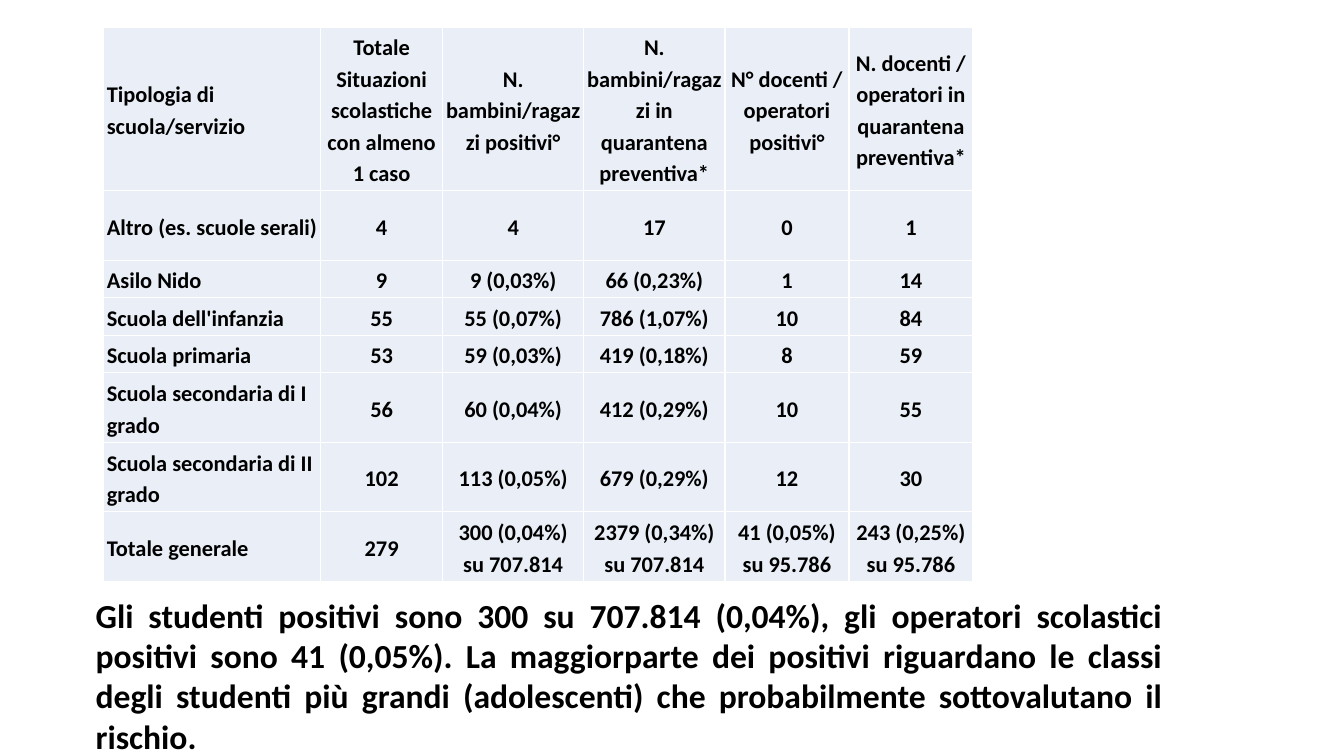
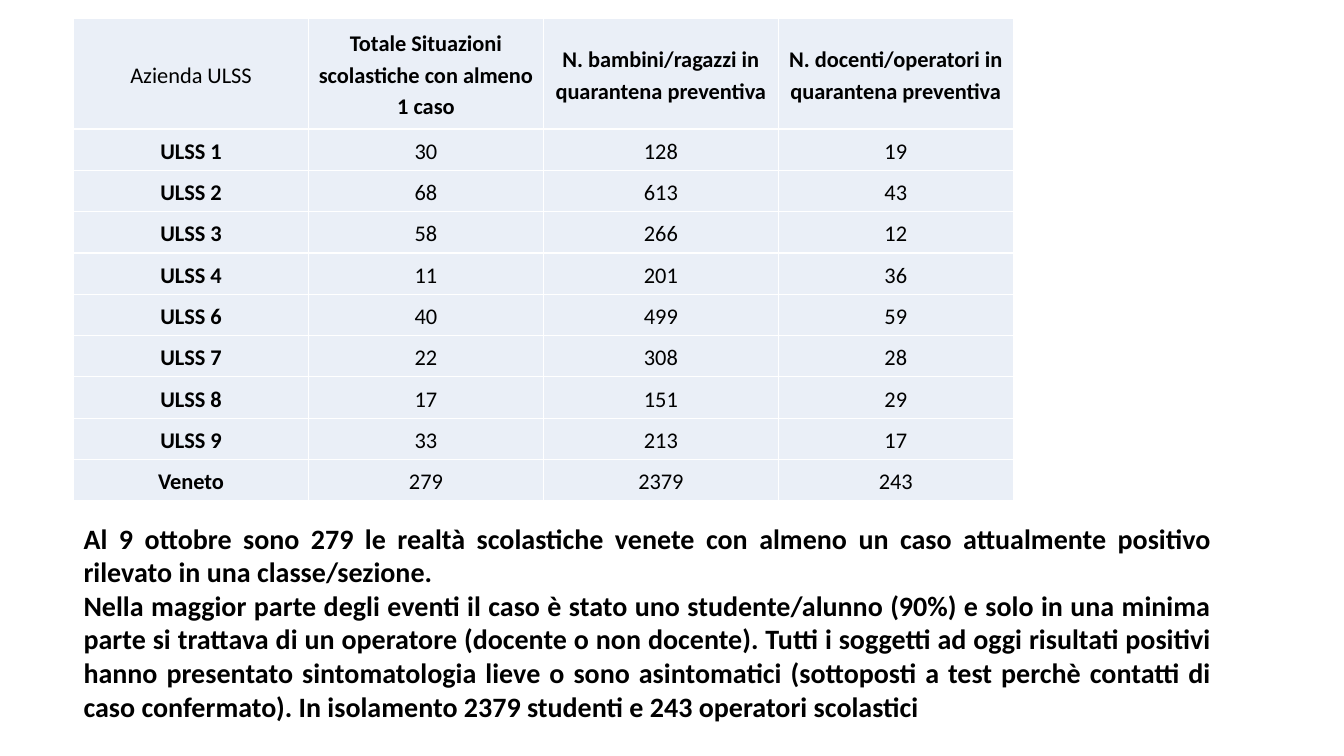
"""Build two slides on positive cases and quarantines in Veneto schools."""
import pptx
import pptx.dml.color
import pptx.enum.text
import pptx.oxml
import pptx.oxml.ns
import pptx.util

Inches, Pt = pptx.util.Inches, pptx.util.Pt
ALIGN = pptx.enum.text.PP_ALIGN
FONT = "Calibri"
COLORS = {"text": "000000", "cell": "EAEFF7", "border": "FFFFFF"}

SLIDES = [
    {
        "table_at": (1.03, 0.27),
        "cols": [2.15, 1.21, 1.4, 1.4, 1.23, 1.23],
        "heights": [1.56, 0.69] + [0.37] * 3 + [0.69] * 3,
        "label_align": ALIGN.LEFT,
        "all_bold": True,
        "rows": [
            ("Tipologia di scuola/servizio",
             "Totale Situazioni scolastiche con almeno 1 caso",
             "N. bambini/ragazzi positivi°",
             "N. bambini/ragazzi in quarantena preventiva*",
             "N° docenti / operatori positivi°",
             "N. docenti / operatori in quarantena preventiva*"),
            ("Altro (es. scuole serali)", "4", "4", "17", "0", "1"),
            ("Asilo Nido", "9", "9 (0,03%)", "66 (0,23%)", "1", "14"),
            ("Scuola dell'infanzia", "55", "55 (0,07%)", "786 (1,07%)", "10", "84"),
            ("Scuola primaria", "53", "59 (0,03%)", "419 (0,18%)", "8", "59"),
            ("Scuola secondaria di I grado", "56", "60 (0,04%)", "412 (0,29%)", "10", "55"),
            ("Scuola secondaria di II grado", "102", "113 (0,05%)", "679 (0,29%)", "12", "30"),
            ("Totale generale", "279", "300 (0,04%)\nsu 707.814",
             "2379 (0,34%)\nsu 707.814", "41 (0,05%) su 95.786",
             "243 (0,25%)\nsu 95.786"),
        ],
        "note_at": (0.85, 5.85, 10.78, 1.72),
        "note_size": 24,
        "note": "Gli studenti positivi sono 300 su 707.814 (0,04%), gli operatori "
                "scolastici positivi sono 41 (0,05%). La maggiorparte dei positivi "
                "riguardano le classi degli studenti più grandi (adolescenti) che "
                "probabilmente sottovalutano il rischio.",
    },
    {
        "table_at": (0.73, 0.18),
        "cols": [2.33] * 4,
        "heights": [1.1] + [0.41] * 9,
        "label_align": ALIGN.CENTER,
        "all_bold": False,
        "rows": [
            ("Azienda ULSS",
             "Totale Situazioni scolastiche con almeno 1 caso",
             "N. bambini/ragazzi in quarantena preventiva",
             "N. docenti/operatori in quarantena preventiva"),
            ("ULSS 1", "30", "128", "19"),
            ("ULSS 2", "68", "613", "43"),
            ("ULSS 3", "58", "266", "12"),
            ("ULSS 4", "11", "201", "36"),
            ("ULSS 6", "40", "499", "59"),
            ("ULSS 7", "22", "308", "28"),
            ("ULSS 8", "17", "151", "29"),
            ("ULSS 9", "33", "213", "17"),
            ("Veneto", "279", "2379", "243"),
        ],
        "note_at": (0.73, 5.12, 11.38, 2.12),
        "note_size": 20,
        "note": "Al 9 ottobre sono 279 le realtà scolastiche venete con almeno un caso "
                "attualmente positivo rilevato in una classe/sezione.\n"
                "Nella maggior parte degli eventi il caso è stato uno studente/alunno "
                "(90%) e solo in una minima parte si trattava di un operatore (docente "
                "o non docente). Tutti i soggetti ad oggi risultati positivi hanno "
                "presentato sintomatologia lieve o sono asintomatici (sottoposti a test "
                "perchè contatti di caso confermato). In isolamento 2379 studenti e 243 "
                "operatori scolastici",
    },
]


def rgb(name):
    return pptx.dml.color.RGBColor.from_string(COLORS[name])


def write(tf, text, size, bold, align, spacing=None):
    tf.text = text
    for p in tf.paragraphs:
        p.alignment = align
        p.line_spacing = spacing
        p.font.name = FONT
        p.font.size = Pt(size)
        p.font.bold = bold
        p.font.color.rgb = rgb("text")


def style_cell(cell):
    cell.vertical_anchor = pptx.enum.text.MSO_ANCHOR.MIDDLE
    cell.margin_left = cell.margin_right = Inches(0.03)
    cell.margin_top = cell.margin_bottom = Inches(0.03)
    cell.fill.solid()
    cell.fill.fore_color.rgb = rgb("cell")
    tc_pr = cell._tc.get_or_add_tcPr()
    for i, side in enumerate("LRTB"):
        tc_pr.insert(i, pptx.oxml.parse_xml(
            f'<a:ln{side} {pptx.oxml.ns.nsdecls("a")} w="{Pt(1)}"><a:solidFill>'
            f'<a:srgbClr val="{COLORS["border"]}"/></a:solidFill></a:ln{side}>'))


def add_data_table(slide, data):
    rows, cols, heights = data["rows"], data["cols"], data["heights"]
    left, top = data["table_at"]
    table = slide.shapes.add_table(
        len(rows), len(cols), Inches(left), Inches(top),
        Inches(sum(cols)), Inches(sum(heights))).table
    table.first_row = table.horz_banding = False
    for column, width in zip(table.columns, cols):
        column.width = Inches(width)
    for i, (row, height) in enumerate(zip(rows, heights)):
        table.rows[i].height = Inches(height)
        for j, text in enumerate(row):
            cell = table.cell(i, j)
            style_cell(cell)
            bold = data["all_bold"] or (i == 0) != (j == 0)
            align = data["label_align"] if j == 0 else ALIGN.CENTER
            write(cell.text_frame, text, 16, bold, align, 1.15)


def add_note(slide, data):
    tf = slide.shapes.add_textbox(*map(Inches, data["note_at"])).text_frame
    tf.word_wrap = True
    write(tf, data["note"], data["note_size"], True, ALIGN.JUSTIFY)


def main():
    prs = pptx.Presentation()
    prs.slide_width, prs.slide_height = Inches(13.33), Inches(7.5)
    for data in SLIDES:
        slide = prs.slides.add_slide(prs.slide_layouts[6])
        add_data_table(slide, data)
        add_note(slide, data)
    prs.save("out.pptx")


if __name__ == "__main__":
    main()
